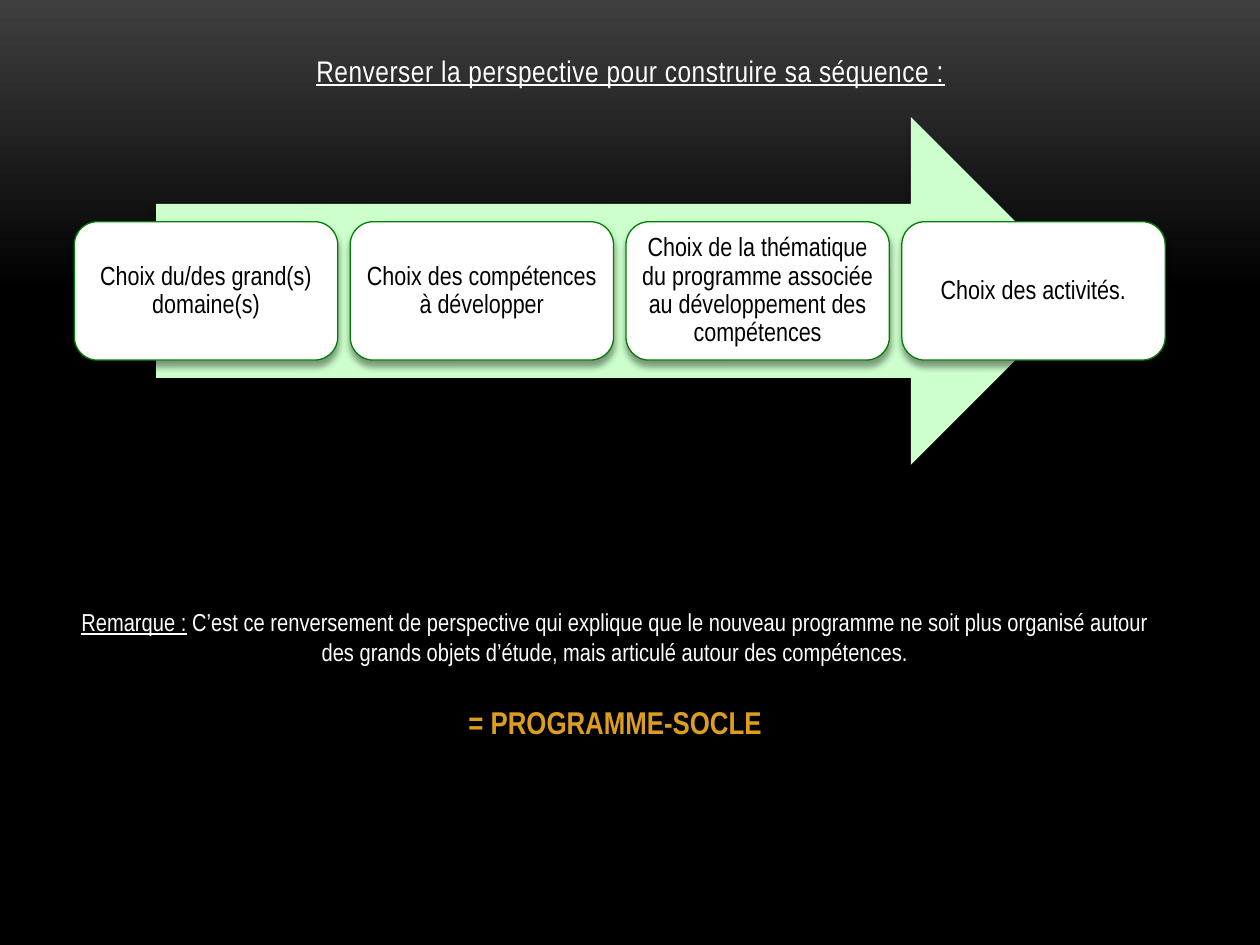
from dataclasses import dataclass

from lxml.etree import SubElement
from pptx import Presentation
from pptx.dml.color import RGBColor
from pptx.enum.shapes import MSO_SHAPE
from pptx.enum.text import MSO_ANCHOR, MSO_AUTO_SIZE, PP_ALIGN
from pptx.oxml.ns import qn
from pptx.shapes.autoshape import Shape
from pptx.slide import Slide
from pptx.util import Cm, Pt

COLORS = {
    "top": "3F3F3F",
    "black": "000000",
    "white": "FFFFFF",
    "arrow": "CCFFCC",
    "border": "008000",
    "accent": "DC9E1F",
}
FONT = "Arial Narrow"
STEPS = [
    "Choix du/des grand(s) domaine(s)",
    "Choix des compétences à développer",
    "Choix de la thématique du programme associée au développement des compétences",
    "Choix des activités.",
]
STEP_LEFT, STEP_PITCH = 1.5, 5.56


@dataclass
class Box:
    """Position and size in centimetres."""
    left: float
    top: float
    width: float
    height: float

    def lengths(self) -> tuple:
        return Cm(self.left), Cm(self.top), Cm(self.width), Cm(self.height)


def color(name: str) -> RGBColor:
    return RGBColor.from_string(COLORS[name])


def add_run(paragraph, text: str, size: float, color_name: str, **formats):
    paragraph.alignment = PP_ALIGN.CENTER
    run = paragraph.add_run()
    run.text = text
    values = {"name": FONT, "size": Pt(size), "bold": False, **formats}
    for name, value in values.items():
        setattr(run.font, name, value)
    run.font.color.rgb = color(color_name)
    return run


def add_shadowed_shape(slide: Slide, kind: MSO_SHAPE, box: Box, fill: str) -> Shape:
    shape = slide.shapes.add_shape(kind, *box.lengths())
    shape.fill.solid()
    shape.fill.fore_color.rgb = color(fill)
    shape.line.fill.background()
    # Soft shadow below the shape
    shape.shadow.inherit = False
    effects = shape._element.spPr.find(qn("a:effectLst"))
    shadow = SubElement(effects, qn("a:outerShdw"), blurRad=str(Pt(4)),
                        dist=str(Pt(3.4)), dir="5400000", rotWithShape="0")
    shadow_color = SubElement(shadow, qn("a:srgbClr"), val=COLORS["black"])
    SubElement(shadow_color, qn("a:alpha"), val="40000")
    return shape


def add_step(slide: Slide, box: Box, text: str) -> None:
    shape = add_shadowed_shape(slide, MSO_SHAPE.ROUNDED_RECTANGLE, box, "white")
    shape.line.color.rgb = color("border")
    shape.line.width = Pt(0.75)
    frame_formats = {
        "word_wrap": True,
        "vertical_anchor": MSO_ANCHOR.MIDDLE,
        "margin_left": Cm(0.05),
        "margin_right": Cm(0.05),
        "margin_top": Cm(0.05),
        "margin_bottom": Cm(0.05),
    }
    for name, value in frame_formats.items():
        setattr(shape.text_frame, name, value)
    paragraph = shape.text_frame.paragraphs[0]
    paragraph.line_spacing = 0.9
    add_run(paragraph, text, 15, "black")


def set_background(slide: Slide) -> None:
    fill = slide.background.fill
    fill.gradient()
    fill.gradient_angle = 270
    for stop, (name, position) in zip(fill.gradient_stops, [("top", 0), ("black", 0.31)]):
        stop.color.rgb = color(name)
        stop.position = position


def set_title(slide: Slide, box: Box, text: str) -> None:
    title = slide.shapes.title
    title.left, title.top, title.width, title.height = box.lengths()
    title.text_frame.vertical_anchor = MSO_ANCHOR.TOP
    title.text_frame.auto_size = MSO_AUTO_SIZE.NONE
    run = add_run(title.text_frame.paragraphs[0], text, 17, "white", underline=True)
    run.font._element.set("spc", "30")


def add_remark(slide: Slide, box: Box) -> None:
    frame = slide.shapes.add_textbox(*box.lengths()).text_frame
    frame.word_wrap = True
    remark = frame.paragraphs[0]
    add_run(remark, "Remarque :", 14, "white", underline=True)
    add_run(remark, " C’est ce renversement de perspective qui explique que le nouveau "
            "programme ne soit plus organisé autour des grands objets d’étude, mais "
            "articulé autour des compétences.", 14, "white")
    conclusion = frame.add_paragraph()
    conclusion.space_before = Pt(21)
    add_run(conclusion, "= PROGRAMME-SOCLE", 18, "accent", bold=True)


def main() -> None:
    presentation = Presentation()
    presentation.slide_width, presentation.slide_height = Cm(25.4), Cm(19.05)
    slide = presentation.slides.add_slide(presentation.slide_layouts[5])
    set_background(slide)
    set_title(slide, Box(1.7, 0.94, 22.02, 1.2),
              "Renverser la perspective pour construire sa séquence :")

    # Process arrow with its steps
    add_shadowed_shape(slide, MSO_SHAPE.RIGHT_ARROW, Box(3.15, 2.36, 18.72, 7.01), "arrow")
    for index, text in enumerate(STEPS):
        add_step(slide, Box(STEP_LEFT + index * STEP_PITCH, 4.47, 5.31, 2.79), text)

    add_remark(slide, Box(1.3, 12.12, 22.2, 3))
    presentation.save("out.pptx")


if __name__ == "__main__":
    main()
